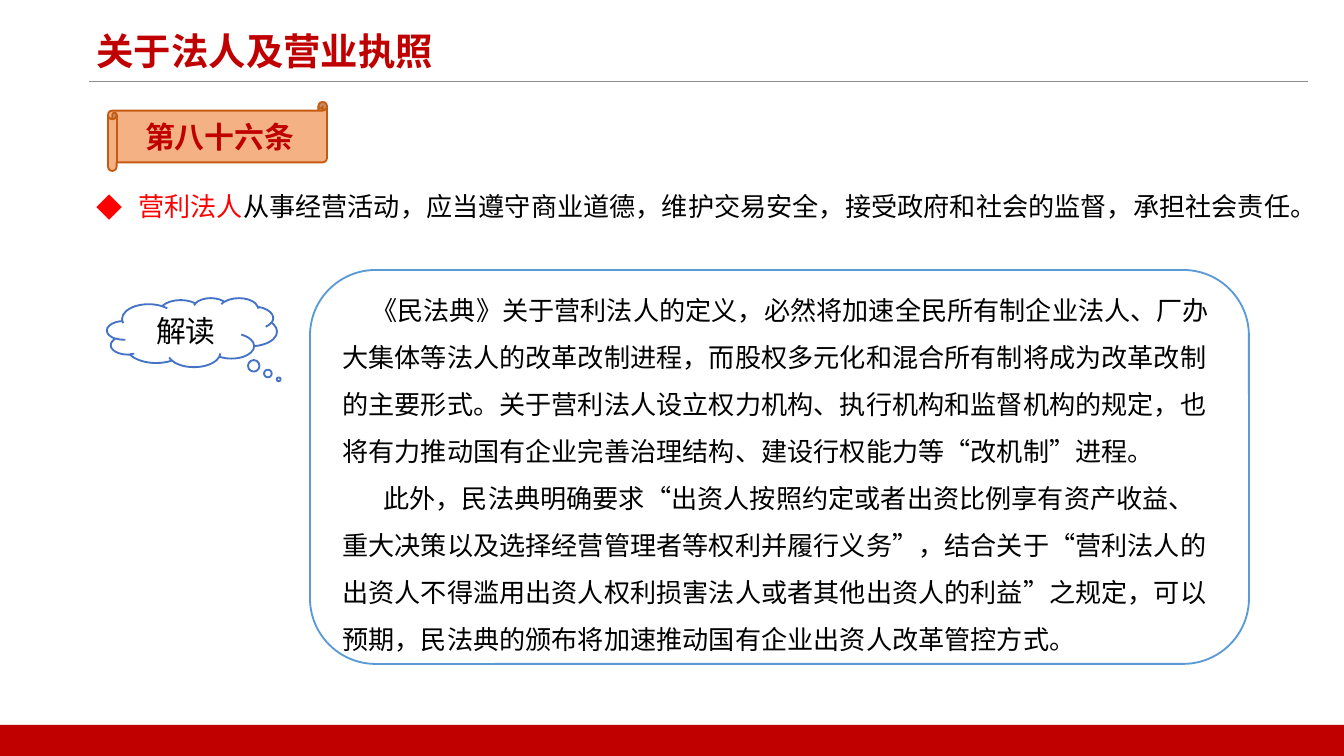
from lxml.etree import SubElement
from pptx import Presentation
from pptx.dml.color import RGBColor
from pptx.enum.shapes import MSO_CONNECTOR as LINE, MSO_SHAPE as SHAPE
from pptx.enum.text import MSO_ANCHOR as ANCHOR, MSO_AUTO_SIZE as FIT, PP_ALIGN as ALIGN
from pptx.oxml.ns import qn
from pptx.util import Pt

PX = 914400 / 134.4
FONT = "Noto Sans CJK SC"
HUES = {"red": "C00000", "bright": "FF0000", "black": "000000", "white": "FFFFFF",
        "grey": "8C8C8C", "blue": "4472C4", "sky": "5B9BD5",
        "peach": "F4B183", "rust": "C55A11"}

TITLE = "关于法人及营业执照"
ARTICLE = "第八十六条"
LABEL = "解读"
CLAUSE = [("营利法人", "bright"),
          ("从事经营活动，应当遵守商业道德，维护交易安全，接受政府和社会的监督，承担社会责任。", "black")]
# first-line indent in px, text
NOTES = [
    (29, "《民法典》关于营利法人的定义，必然将加速全民所有制企业法人、厂办大集体等法人的改革改制进程，"
         "而股权多元化和混合所有制将成为改革改制的主要形式。关于营利法人设立权力机构、执行机构和监督机构的规定，"
         "也将有力推动国有企业完善治理结构、建设行权能力等“改机制”进程。"),
    (41, "此外，民法典明确要求“出资人按照约定或者出资比例享有资产收益、重大决策以及选择经营管理者等权利并履行义务”，"
         "结合关于“营利法人的出资人不得滥用出资人权利损害法人或者其他出资人的利益”之规定，可以预期，"
         "民法典的颁布将加速推动国有企业出资人改革管控方式。"),
]


def px(n):
    return round(n * PX)


def hue(name):
    return RGBColor.from_string(HUES[name])


def write(para, runs, size=14, bold=False, align=ALIGN.LEFT, gap=1.5,
          left=0, indent=0, bullet=None):
    """Fill a paragraph with (text, colour) runs."""
    props = para._p.get_or_add_pPr()
    props.set("marL", str(px(left)))
    props.set("indent", str(px(indent)))
    para.alignment = align
    para.line_spacing = gap
    if bullet:
        SubElement(props, qn("a:buFont"), typeface=FONT)
        SubElement(props, qn("a:buChar"), char=bullet)
    for text, tone in runs:
        run = para.add_run()
        run.text = text
        font = run.font
        font.size, font.bold, font.name = Pt(size), bold, FONT
        font.color.rgb = hue(tone)
        SubElement(run._r.get_or_add_rPr(), qn("a:ea"), typeface=FONT)


def frame(shape, anchor=ANCHOR.MIDDLE):
    box = shape.text_frame
    box.word_wrap, box.auto_size = True, FIT.NONE
    box.vertical_anchor = anchor
    return box


def draw(slide, kind, area, fill=None, line=None):
    shape = slide.shapes.add_shape(kind, *map(px, area))
    shape.shadow.inherit = False
    if fill:
        shape.fill.solid()
        shape.fill.fore_color.rgb = hue(fill)
    else:
        shape.fill.background()
    if line:
        shape.line.color.rgb = hue(line)
        shape.line.width = Pt(1)
    else:
        shape.line.fill.background()
    return shape


def main():
    deck = Presentation()
    deck.slide_width, deck.slide_height = px(1344), px(756)
    slide = deck.slides.add_slide(deck.slide_layouts[5])

    title = slide.shapes.title
    title.left, title.top, title.width, title.height = map(px, (83, 27, 419, 69))
    write(frame(title, ANCHOR.TOP).paragraphs[0], [(TITLE, "red")],
          size=20, bold=True, gap=0.9)

    rule = slide.shapes.add_connector(LINE.STRAIGHT, px(89), px(82), px(1308), px(82))
    rule.line.color.rgb = hue("grey")
    rule.line.width = Pt(0.5)
    SubElement(rule._element.spPr, qn("a:effectLst"))
    draw(slide, SHAPE.RECTANGLE, (0, 725, 1344, 31), fill="red")

    cloud = draw(slide, SHAPE.CLOUD_CALLOUT, (107, 298, 170, 69), "white", "blue")
    cloud.adjustments[0], cloud.adjustments[1] = 0.51, 0.68
    write(frame(cloud).paragraphs[0], [(LABEL, "black")],
          size=16, align=ALIGN.CENTER, gap=1.0)

    panel = frame(draw(slide, SHAPE.ROUNDED_RECTANGLE, (310, 270, 939, 394), line="sky"))
    for i, (indent, text) in enumerate(NOTES):
        para = panel.add_paragraph() if i else panel.paragraphs[0]
        write(para, [(text, "black")], indent=indent)

    scroll = draw(slide, SHAPE.HORIZONTAL_SCROLL, (108, 102, 219, 69), "peach", "rust")
    write(frame(scroll).paragraphs[0], [(ARTICLE, "red")],
          size=16, bold=True, align=ALIGN.CENTER, gap=1.0)

    clause = slide.shapes.add_textbox(*map(px, (83, 171, 1224, 54)))
    write(frame(clause).paragraphs[0], CLAUSE, left=42, indent=-42, bullet="◆")

    deck.save("out.pptx")


if __name__ == "__main__":
    main()
